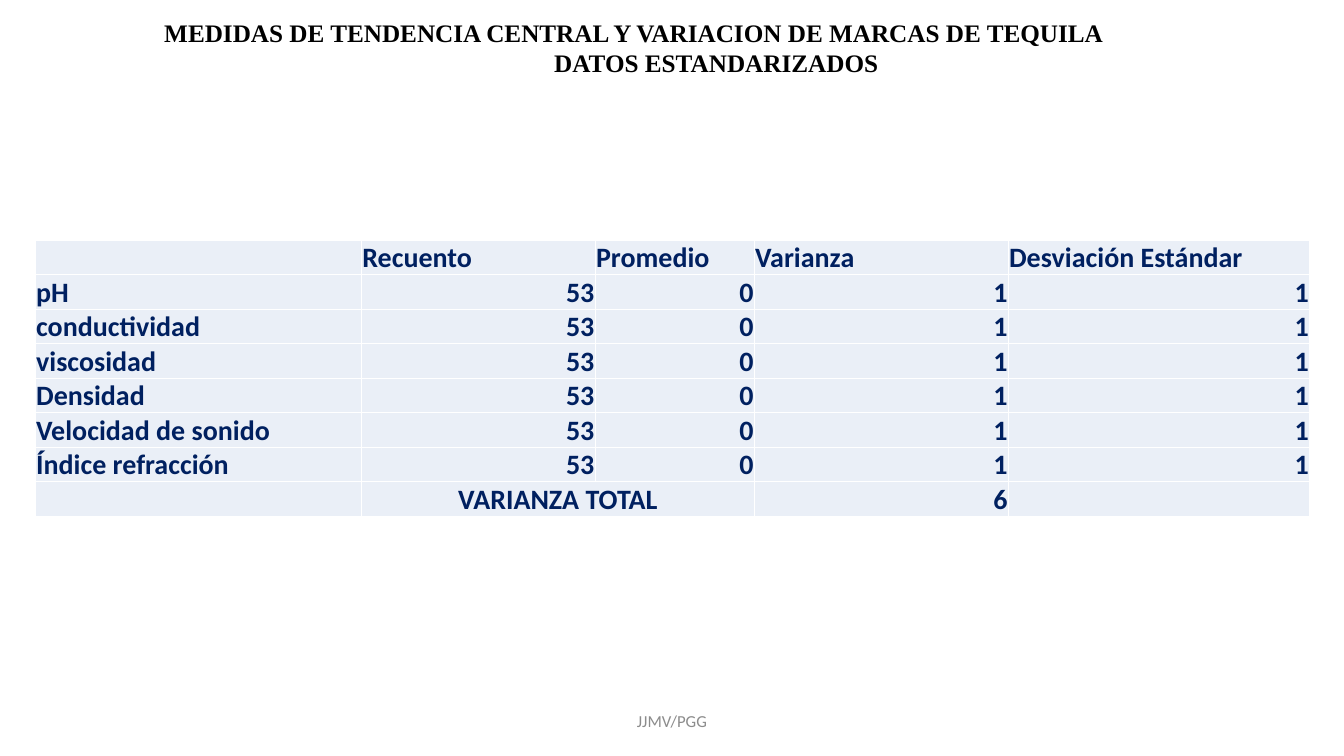
from lxml.etree import SubElement
from pptx import Presentation
from pptx.dml.color import RGBColor
from pptx.enum.text import MSO_ANCHOR, PP_ALIGN
from pptx.oxml.ns import qn
from pptx.util import Cm, Pt

BLACK = RGBColor(0x00, 0x00, 0x00)
GRAY = RGBColor(0x8C, 0x8C, 0x8C)
NAVY = RGBColor(0x00, 0x20, 0x60)
PALE_BLUE = RGBColor(0xEA, 0xEF, 0xF7)
WHITE = RGBColor(0xFF, 0xFF, 0xFF)

HEADINGS = ["", "Recuento", "Promedio", "Varianza", "Desviación Estándar"]
VARIABLES = ["pH", "conductividad", "viscosidad", "Densidad",
             "Velocidad de sonido", "Índice refracción"]
STATISTICS = ["53", "0", "1", "1"]
TOTALS = ["", "VARIANZA TOTAL", "", "6", ""]
COLUMN_WIDTHS = [8.22, 5.89, 4.01, 6.4, 7.59]
ROW_HEIGHT = 0.87


def add_text(paragraph, text, font, size, color, bold=False, align=PP_ALIGN.LEFT):
    paragraph.alignment = align
    run = paragraph.add_run()
    run.text = text
    run.font.name = font
    run.font.size = Pt(size)
    run.font.bold = bold
    run.font.color.rgb = color


def add_box(slide, left, top, width, height, anchor=MSO_ANCHOR.TOP):
    box = slide.shapes.add_textbox(Cm(left), Cm(top), Cm(width), Cm(height))
    frame = box.text_frame
    frame.word_wrap = True
    frame.vertical_anchor = anchor
    return frame


def add_borders(cell, color, width):
    properties = cell._tc.get_or_add_tcPr()
    for position, side in enumerate(("a:lnL", "a:lnR", "a:lnT", "a:lnB")):
        line = SubElement(properties, qn(side), w=str(Pt(width)))
        fill = SubElement(line, qn("a:solidFill"))
        SubElement(fill, qn("a:srgbClr"), val=str(color))
        # Borders come before the fill in the cell properties
        properties.insert(position, line)


def format_cell(cell):
    cell.fill.solid()
    cell.fill.fore_color.rgb = PALE_BLUE
    cell.vertical_anchor = MSO_ANCHOR.BOTTOM
    cell.margin_left = cell.margin_right = cell.margin_top = Cm(0.02)
    cell.margin_bottom = Cm(0)
    add_borders(cell, WHITE, 1)


def add_statistics_table(slide, left, top):
    rows = [HEADINGS, *([name, *STATISTICS] for name in VARIABLES), TOTALS]
    last = len(rows) - 1
    table = slide.shapes.add_table(
        len(rows), len(HEADINGS), Cm(left), Cm(top),
        Cm(sum(COLUMN_WIDTHS)), Cm(ROW_HEIGHT * len(rows))).table
    for column, width in zip(table.columns, COLUMN_WIDTHS):
        column.width = Cm(width)
    for r, values in enumerate(rows):
        table.rows[r].height = Cm(ROW_HEIGHT)
        for c, value in enumerate(values):
            cell = table.cell(r, c)
            format_cell(cell)
            if value:
                align = PP_ALIGN.RIGHT if value.isdigit() else PP_ALIGN.LEFT
                if value == "VARIANZA TOTAL":
                    align = PP_ALIGN.CENTER
                add_text(cell.text_frame.paragraphs[0], value, "Calibri", 20,
                         NAVY, True, align)
    table.cell(last, 1).merge(table.cell(last, 2))


def main():
    presentation = Presentation()
    presentation.slide_width = Cm(33.87)
    presentation.slide_height = Cm(19.05)
    slide = presentation.slides.add_slide(presentation.slide_layouts[6])

    # Title
    title = add_box(slide, 3.89, 0.3, 28.32, 1.8)
    add_text(title.paragraphs[0],
             "MEDIDAS DE TENDENCIA CENTRAL Y VARIACION DE MARCAS DE TEQUILA",
             "Times New Roman", 18, BLACK, True)
    add_text(title.add_paragraph(), "DATOS ESTANDARIZADOS",
             "Times New Roman", 18, BLACK, True, PP_ALIGN.CENTER)

    # Footer
    footer = add_box(slide, 11.22, 17.66, 11.43, 1.01, MSO_ANCHOR.MIDDLE)
    add_text(footer.paragraphs[0], "JJMV/PGG", "Calibri", 12, GRAY,
             align=PP_ALIGN.CENTER)

    # Statistics of each variable and total variance
    add_statistics_table(slide, 0.89, 6.05)

    presentation.save("out.pptx")


if __name__ == "__main__":
    main()
